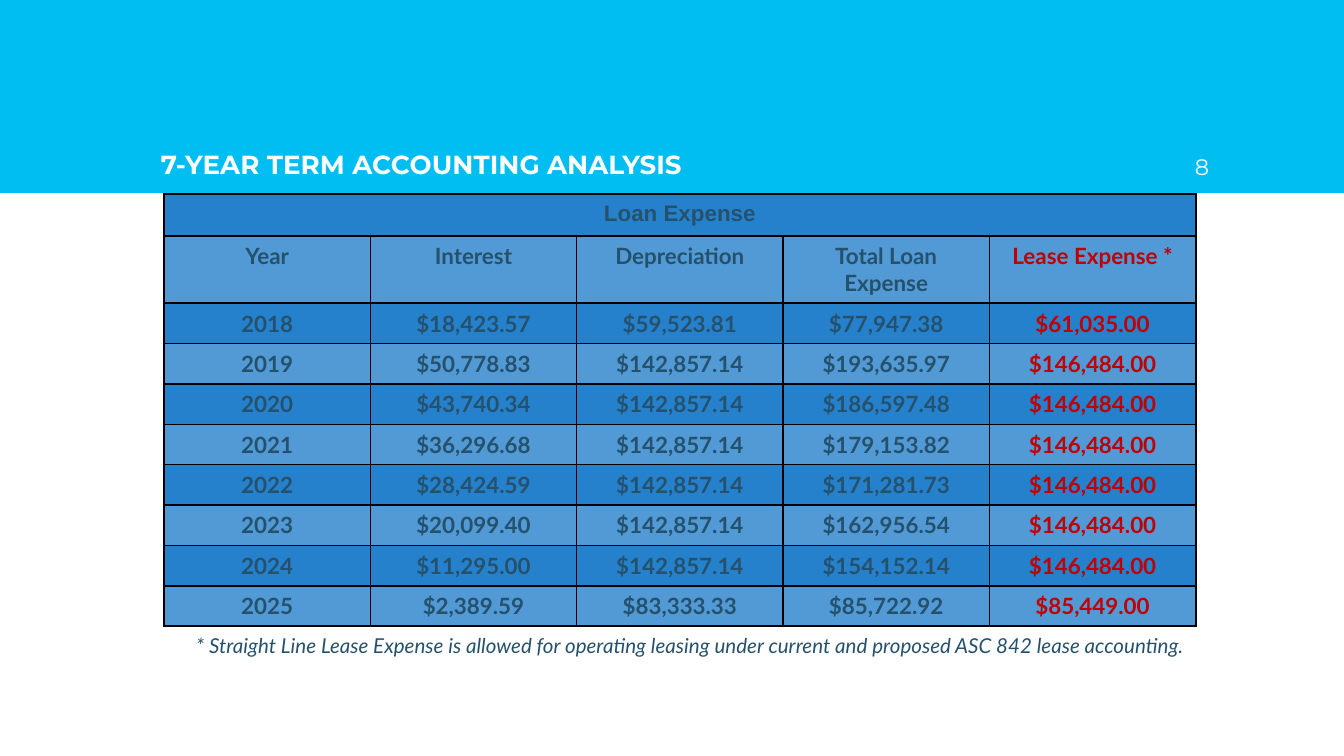
from pptx import Presentation
from pptx.dml.color import RGBColor
from pptx.enum.shapes import MSO_SHAPE as Shape
from pptx.enum.text import MSO_ANCHOR as Anchor, PP_ALIGN as Align
from pptx.oxml import parse_xml
from pptx.oxml.ns import nsdecls
from pptx.util import Pt

# Content
TITLE = "7-YEAR TERM ACCOUNTING ANALYSIS"
PAGE_NUMBER = "8"
TABLE_HEADING = "Loan Expense"
COLUMNS = ("Year", "Interest", "Depreciation", "Total Loan Expense", "Lease Expense *")
YEARS = [
    ("2018", "$18,423.57", "$59,523.81", "$77,947.38", "$61,035.00"),
    ("2019", "$50,778.83", "$142,857.14", "$193,635.97", "$146,484.00"),
    ("2020", "$43,740.34", "$142,857.14", "$186,597.48", "$146,484.00"),
    ("2021", "$36,296.68", "$142,857.14", "$179,153.82", "$146,484.00"),
    ("2022", "$28,424.59", "$142,857.14", "$171,281.73", "$146,484.00"),
    ("2023", "$20,099.40", "$142,857.14", "$162,956.54", "$146,484.00"),
    ("2024", "$11,295.00", "$142,857.14", "$154,152.14", "$146,484.00"),
    ("2025", "$2,389.59", "$83,333.33", "$85,722.92", "$85,449.00"),
]
FOOTNOTE = ("* Straight Line Lease Expense is allowed for operating leasing "
            "under current and proposed ASC 842 lease accounting.")

# Theme
COLOURS = {"band": "00BEF2", "white": "FFFFFF", "ink": "25516C", "lease": "C00000",
           "dark row": "2581CC", "light row": "519AD6", "border": "000000"}
THEME = {
    "title": {"name": "Montserrat", "size": Pt(14), "bold": True, "colour": "white"},
    "number": {"name": "Montserrat", "size": Pt(12), "colour": "white"},
    "heading": {"name": "Arial", "size": Pt(12), "bold": True, "colour": "ink"},
    "cell": {"name": "Lato", "size": Pt(12), "bold": True, "colour": "ink"},
    "lease": {"name": "Lato", "size": Pt(12), "bold": True, "colour": "lease"},
    "footnote": {"name": "Lato", "size": Pt(11), "italic": True, "colour": "ink"},
}

# Layout in px
PAGE = (1344, 756)
BAND = (0, 0, 1344, 193)
TITLE_BOX = (148, 95, 1048, 98)
NUMBER_BOX = (1141, 95, 81, 98)
TABLE = (164, 194, 1032, 432)
FOOTNOTE_BOX = (183, 626, 1032, 39)
HEADING_HEIGHT, COLUMNS_HEIGHT, YEAR_HEIGHT = 42, 67, 40
INSET = 13


def emu(px):
    return round(px * 914400 / 134.4)


def colour(name):
    return RGBColor.from_string(COLOURS[name])


def write(frame, text, style, align=Align.LEFT):
    para = frame.paragraphs[0]
    para.alignment = align
    span = para.add_run()
    span.text = text
    for key, value in THEME[style].items():
        if key == "colour":
            span.font.color.rgb = colour(value)
        else:
            setattr(span.font, key, value)


def add_text(page, place, text, style, align=Align.LEFT, **frame_format):
    box = page.shapes.add_textbox(*map(emu, place))
    for key, value in {"word_wrap": True, **frame_format}.items():
        setattr(box.text_frame, key, value)
    write(box.text_frame, text, style, align)


def style_cell(cell, fill):
    properties = cell._tc.get_or_add_tcPr()
    for side in ("lnL", "lnR", "lnT", "lnB"):
        properties.append(parse_xml(
            f'<a:{side} {nsdecls("a")} w="{Pt(1)}"><a:solidFill>'
            f'<a:srgbClr val="{COLOURS["border"]}"/></a:solidFill></a:{side}>'))
    cell.fill.solid()
    cell.fill.fore_color.rgb = colour(fill)


def add_expense_table(page):
    rows = [(TABLE_HEADING,), COLUMNS, *YEARS]
    heights = [HEADING_HEIGHT, COLUMNS_HEIGHT] + [YEAR_HEIGHT] * len(YEARS)
    frame = page.shapes.add_table(len(rows), len(COLUMNS), *map(emu, TABLE))
    table = frame.table
    for column in table.columns:
        column.width = emu(TABLE[2] / len(COLUMNS))
    for index, (row, height) in enumerate(zip(table.rows, heights)):
        row.height = emu(height)
        for cell in row.cells:
            style_cell(cell, "light row" if index % 2 else "dark row")
    table.cell(0, 0).merge(table.cell(0, len(COLUMNS) - 1))
    for index, texts in enumerate(rows):
        for position, text in enumerate(texts):
            style = "lease" if position == len(COLUMNS) - 1 else "cell"
            if index == 0:
                style = "heading"
            write(table.cell(index, position).text_frame, text, style, Align.CENTER)


def main():
    deck = Presentation()
    deck.slide_width, deck.slide_height = map(emu, PAGE)
    page = deck.slides.add_slide(deck.slide_layouts[6])

    # Header band with title and page number
    band = page.shapes.add_shape(Shape.RECTANGLE, *map(emu, BAND))
    band.shadow.inherit = False
    band.fill.solid()
    band.fill.fore_color.rgb = colour("band")
    band.line.fill.background()
    header = {"vertical_anchor": Anchor.BOTTOM,
              **{f"margin_{side}": emu(INSET) for side in ("left", "top", "right", "bottom")}}
    add_text(page, TITLE_BOX, TITLE, "title", **header)
    add_text(page, NUMBER_BOX, PAGE_NUMBER, "number", Align.RIGHT, **header)

    # Expenses and footnote
    add_expense_table(page)
    add_text(page, FOOTNOTE_BOX, FOOTNOTE, "footnote")
    deck.save("out.pptx")


if __name__ == "__main__":
    main()
